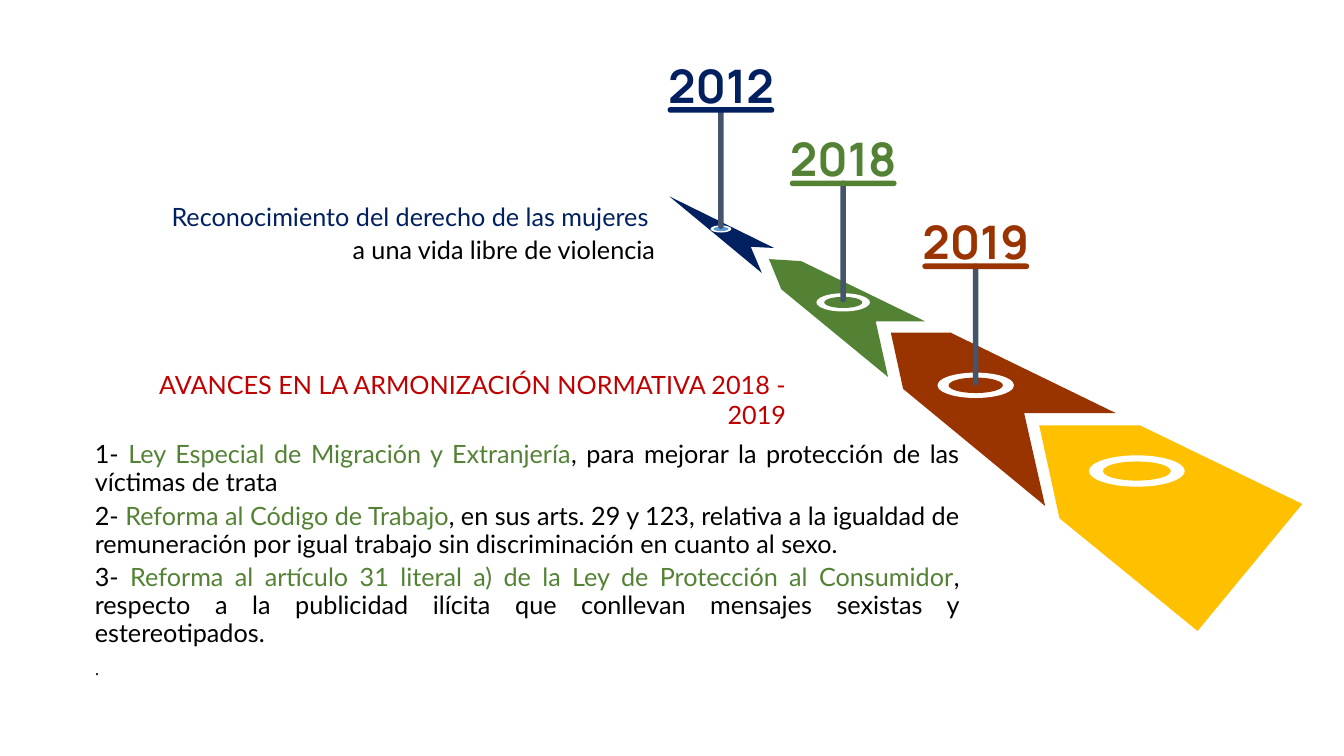
from pptx import Presentation
from pptx.dml.color import RGBColor
from pptx.enum import shapes, text
from pptx.util import Cm, Pt

NAVY = RGBColor(0x00, 0x20, 0x60)
GREEN = RGBColor(0x54, 0x82, 0x35)
BROWN = RGBColor(0x99, 0x33, 0x00)
YELLOW = RGBColor(0xFF, 0xC0, 0x00)
BLUE = RGBColor(0x5B, 0x9B, 0xD5)
SLATE = RGBColor(0x44, 0x54, 0x6A)
RED = RGBColor(0xC0, 0x00, 0x00)
WHITE = RGBColor(0xFF, 0xFF, 0xFF)
BLACK = RGBColor(0x00, 0x00, 0x00)

# Lengths in centimetres
ROAD_PIECES = [
    (BROWN, [(25.81, 10.41), (28.12, 10.41), (23.95, 8.38),
             (22.45, 8.38), (22.76, 9.8), (26.34, 12.75)]),
    (GREEN, [(22.07, 8.1), (23.32, 8.1), (20.19, 6.58),
             (19.38, 6.53), (19.69, 7.29), (22.38, 9.5)]),
    (NAVY, [(18.92, 6.22), (19.51, 6.25), (16.87, 4.95), (19.2, 6.88)]),
    (YELLOW, [(26.19, 10.72), (28.73, 10.72), (32.82, 12.7),
              (30.18, 15.9), (26.7, 13.06)]),
]

# Year, colour, ring centre colour, ring centre x and y, ring width and height
MILESTONES = [
    (None, YELLOW, YELLOW, 28.65, 11.87, 2.41, 0.79),
    ("2019", BROWN, BROWN, 24.59, 9.71, 1.93, 0.64),
    ("2018", GREEN, GREEN, 21.25, 7.62, 1.35, 0.46),
    ("2012", NAVY, BLUE, 18.17, 5.77, 0.53, 0.18),
]
RING_HOLE = (0.71, 0.61)
POLE_HEIGHT, BAR_WIDTH, THICKNESS = 3.07, 2.69, 0.14
YEAR_WIDTH, YEAR_HEIGHT, YEAR_RISE = 2.87, 1.68, 1.55

RIGHT, JUSTIFY = text.PP_ALIGN.RIGHT, text.PP_ALIGN.JUSTIFY

# Box, alignment, fixed line spacing or None, paragraphs of (wording, colour) runs
TEXTS = [
    ((3.3, 5.03, 13.26, 1.73), RIGHT, Pt(20), [
        [("Reconocimiento del derecho de las mujeres ", NAVY)],
        [("a una vida libre de violencia", BLACK)],
    ]),
    ((3.02, 9.22, 16.84, 1.68), RIGHT, None, [
        [("AVANCES EN LA ARMONIZACIÓN NORMATIVA 2018 - 2019", RED)],
    ]),
    ((2.34, 11.02, 21.89, 6.17), JUSTIFY, Pt(20), [
        [("1- ", BLACK), ("Ley Especial de Migración y Extranjería", GREEN),
         (", para mejorar la protección de las víctimas de trata ", BLACK)],
        [("2- ", BLACK), ("Reforma al Código de Trabajo", GREEN),
         (", en sus arts. 29 y 123, relativa a la igualdad de remuneración por "
          "igual trabajo sin discriminación en cuanto al sexo. ", BLACK)],
        [("3- ", BLACK),
         ("Reforma al artículo 31 literal a) de la Ley de Protección al Consumidor", GREEN),
         (", respecto a la publicidad ilícita que conllevan mensajes sexistas y "
          "estereotipados.", BLACK)],
        [(".", BLACK)],
    ]),
]

presentation = Presentation()
presentation.slide_width, presentation.slide_height = Cm(33.87), Cm(19.05)
slide = presentation.slides.add_slide(presentation.slide_layouts[6])


def paint(shape, colour):
    shape.shadow.inherit = False
    shape.fill.solid()
    shape.fill.fore_color.rgb = colour
    shape.line.fill.background()


def add_centred(kind, x, y, width, height, colour):
    """Add a plain shape whose centre is at x, y."""
    shape = slide.shapes.add_shape(
        kind, Cm(x - width / 2), Cm(y - height / 2), Cm(width), Cm(height))
    paint(shape, colour)
    return shape


def add_rounded(x, y, width, height, colour):
    shape = add_centred(shapes.MSO_SHAPE.ROUNDED_RECTANGLE, x, y, width, height, colour)
    shape.adjustments[0] = 0.5


def add_frame(box, inset, wrap, anchor):
    frame = slide.shapes.add_textbox(*map(Cm, box)).text_frame
    frame.margin_left = frame.margin_right = Cm(inset)
    frame.margin_top = frame.margin_bottom = Cm(inset)
    frame.word_wrap = wrap
    frame.auto_size = text.MSO_AUTO_SIZE.SHAPE_TO_FIT_TEXT
    frame.vertical_anchor = anchor
    return frame


for colour, points in ROAD_PIECES:
    start, *others = [(Cm(x), Cm(y)) for x, y in points]
    builder = slide.shapes.build_freeform(*start)
    builder.add_line_segments(others, close=True)
    paint(builder.convert_to_shape(), colour)

for year, colour, hole_colour, x, y, width, height in MILESTONES:
    oval = shapes.MSO_SHAPE.OVAL
    add_centred(oval, x, y, width, height, WHITE)
    add_centred(oval, x, y, width * RING_HOLE[0], height * RING_HOLE[1], hole_colour)
    if year is None:
        continue
    top = y - POLE_HEIGHT
    add_rounded(x, y - POLE_HEIGHT / 2, THICKNESS, POLE_HEIGHT, SLATE)
    add_rounded(x, top + THICKNESS / 2, BAR_WIDTH, THICKNESS, colour)
    box = (x - YEAR_WIDTH / 2, top - YEAR_RISE, YEAR_WIDTH, YEAR_HEIGHT)
    paragraph = add_frame(box, 0, False, text.MSO_ANCHOR.BOTTOM).paragraphs[0]
    paragraph.text = year
    paragraph.alignment = text.PP_ALIGN.CENTER
    font = paragraph.font
    font.name, font.size, font.bold = "Manrope", Pt(33), True
    font.color.rgb = colour

for box, alignment, spacing, paragraphs in TEXTS:
    frame = add_frame(box, 0.05, True, text.MSO_ANCHOR.MIDDLE)
    for index, runs in enumerate(paragraphs):
        paragraph = frame.add_paragraph() if index else frame.paragraphs[0]
        closing_dot = runs[0][0] == "."
        paragraph.alignment = alignment
        if spacing:
            paragraph.line_spacing = spacing
            paragraph.space_before = Pt(2 if closing_dot else 4)
        paragraph.font.name = "Open Sans" if closing_dot else "Lato"
        paragraph.font.size = Pt(12 if closing_dot else 18)
        for wording, colour in runs:
            run = paragraph.add_run()
            run.text = wording
            run.font.color.rgb = colour

presentation.save("out.pptx")
